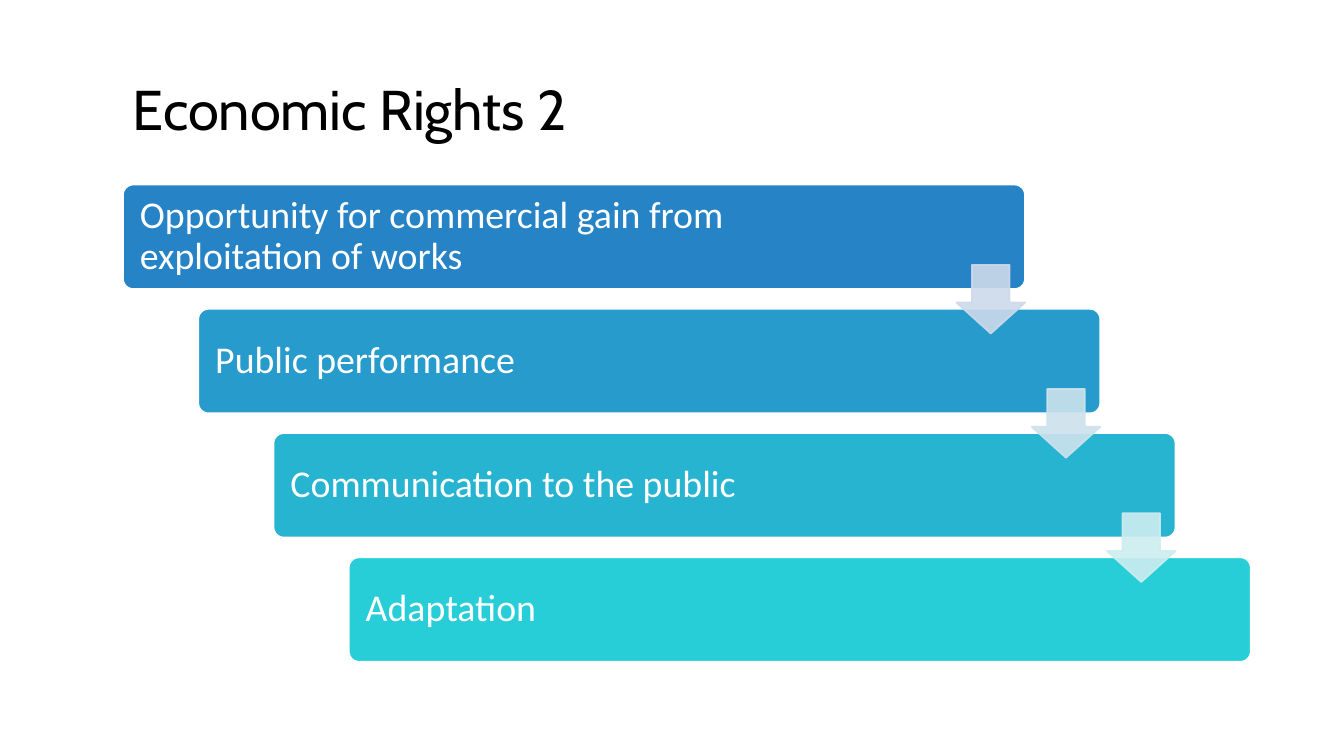
from dataclasses import dataclass

from lxml import etree
from pptx import Presentation
from pptx import util as u
from pptx.dml.color import RGBColor
from pptx.enum import shapes, text
from pptx.oxml.ns import qn


@dataclass(frozen=True)
class Theme:
    title_font: str = "Cabin"
    body_font: str = "Calibri"
    title_size: int = 40
    body_size: int = 27
    ink: str = "000000"
    white: str = "FFFFFF"
    bars: tuple = ("2683C6", "269BCC", "27B4D1", "27CED7")
    arrows: tuple = ("CDD9EA", "CDE2ED", "CDEDF0")
    line: float = 1.25
    arrow_alpha: int = 90


class Deck:
    """Hold the theme and current slide, and add its elements."""

    def __init__(self, theme):
        self.t = theme
        self.prs = Presentation()
        self.prs.slide_width, self.prs.slide_height = u.Pt(960), u.Pt(540)
        self.s = self.prs.slides.add_slide(self.prs.slide_layouts[5])

    def put_text(self, sp, words, font, size, color, insets=(7.2, 3.6, 7.2, 3.6), after=0):
        tf = sp.text_frame
        tf.word_wrap = True
        tf.auto_size = text.MSO_AUTO_SIZE.NONE
        tf.vertical_anchor = text.MSO_ANCHOR.MIDDLE
        tf.margin_left, tf.margin_top, tf.margin_right, tf.margin_bottom = map(u.Pt, insets)
        p = tf.paragraphs[0]
        p.alignment = text.PP_ALIGN.LEFT
        p.line_spacing = 0.9
        p.space_after = u.Pt(after)
        r = p.add_run()
        r.text = words
        r.font.name, r.font.size = font, u.Pt(size)
        r.font.color.rgb = RGBColor.from_string(color)

    def title(self, words, x, y, w, h):
        sp = self.s.shapes.title
        sp.left, sp.top, sp.width, sp.height = map(u.Pt, (x, y, w, h))
        self.put_text(sp, words, self.t.title_font, self.t.title_size, self.t.ink, after=6)

    def shape(self, kind, x, y, w, h, adj, fill, line, alpha=100):
        sp = self.s.shapes.add_shape(kind, *map(u.Pt, (x, y, w, h)))
        sp.shadow.inherit = False
        for i, value in enumerate(adj):
            sp.adjustments[i] = value
        sp.line.width = u.Pt(self.t.line)
        sp.line.fill.solid()
        sp.fill.solid()
        sp.fill.fore_color.rgb = RGBColor.from_string(fill)
        sp.line.color.rgb = RGBColor.from_string(line)
        if alpha < 100:
            for clr in sp._element.spPr.iter(qn("a:srgbClr")):
                etree.SubElement(clr, qn("a:alpha"), val=str(alpha * 1000))
        return sp

    def bar(self, words, x, y, w, h, color):
        sp = self.shape(shapes.MSO_SHAPE.ROUNDED_RECTANGLE, x, y, w, h, [0.1], color, self.t.white)
        self.put_text(sp, words, self.t.body_font, self.t.body_size, self.t.white,
                      insets=(10, 8, 93, 8))

    def arrow(self, x, y, size, color):
        self.shape(shapes.MSO_SHAPE.DOWN_ARROW, x, y, size, size, [0.55, 0.45],
                   color, color, self.t.arrow_alpha)


def main():
    theme = Theme()
    d = Deck(theme)
    d.title("Economic Rights 2", 87.8, 40.3, 805.7, 80)
    rights = (
        "Opportunity for commercial gain from exploitation of works",
        "Public performance",
        "Communication to the public",
        "Adaptation",
    )
    left, top, width, height = 87.8, 131.8, 644.4, 74.7
    step_x, step_y = 53.75, 88.75
    arrow_size, arrow_drop = 49, 57.4
    for i, (words, color) in enumerate(zip(rights, theme.bars)):
        d.bar(words, left + i * step_x, top + i * step_y, width, height, color)
    for i, color in enumerate(theme.arrows):
        d.arrow(left + width - arrow_size + i * step_x, top + arrow_drop + i * step_y,
                arrow_size, color)
    d.prs.save("out.pptx")


if __name__ == "__main__":
    main()
